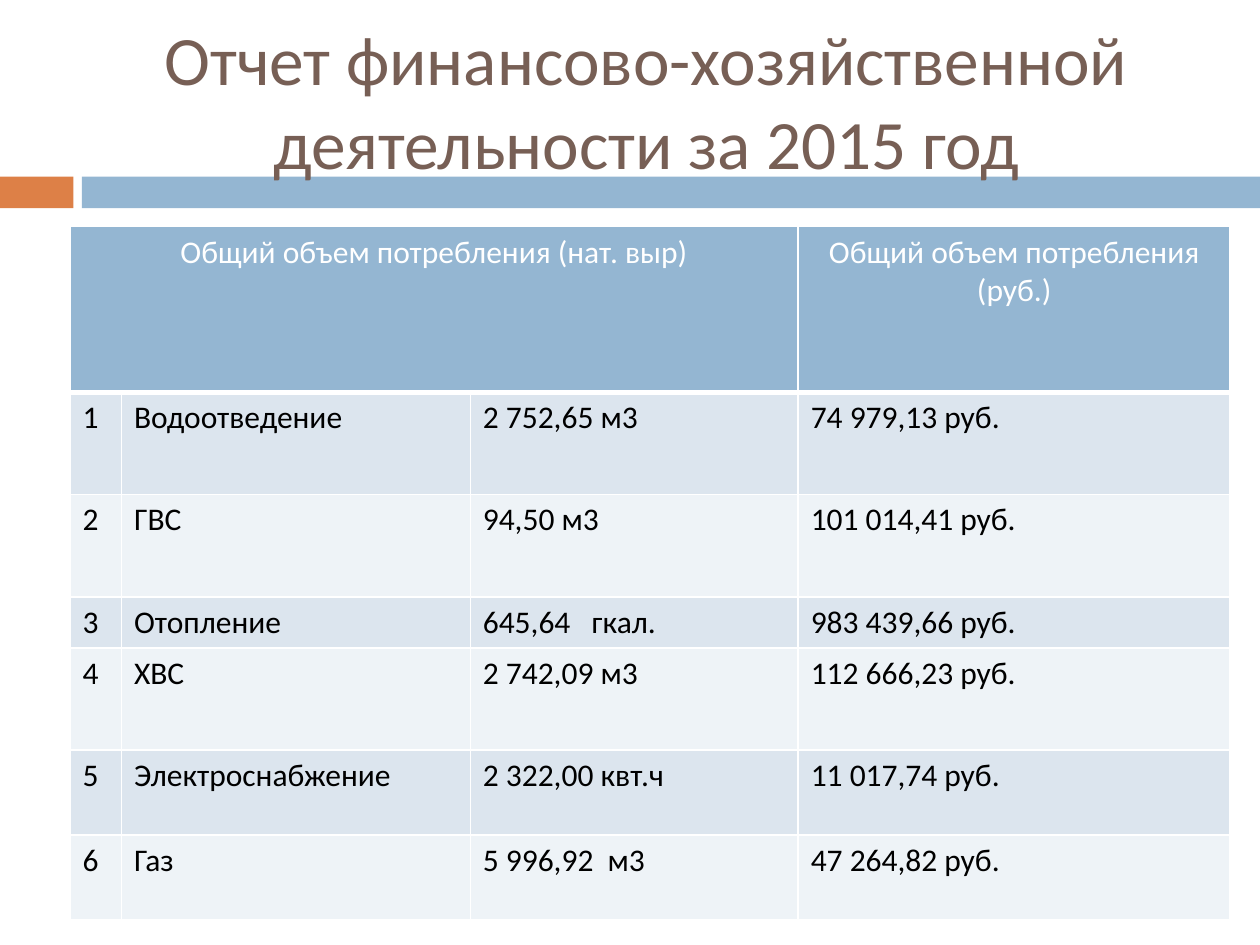
from dataclasses import dataclass

import pptx
import pptx.dml.color
import pptx.enum.shapes
import pptx.enum.text
import pptx.oxml
import pptx.oxml.ns
import pptx.util
from pptx.util import Cm, Pt

ALIGN = pptx.enum.text.PP_ALIGN
ANCHOR = pptx.enum.text.MSO_ANCHOR
FONT = "Calibri"
ORANGE, BLUE, BROWN = "DD8047", "94B6D2", "775F55"
WHITE, BLACK = "FFFFFF", "000000"
BANDS = ("DCE5EE", "EEF3F7")

COL_WIDTHS = (1.04, 7.03, 6.61, 8.71)
HEADER_HEIGHT = 3.34


@dataclass(frozen=True)
class Bar:
    left: float
    width: float
    color: str


@dataclass(frozen=True)
class Resource:
    name: str
    volume: str
    cost: str
    height: float


BARS = (Bar(0, 1.48, ORANGE), Bar(1.65, 23.75, BLUE))

RESOURCES = (
    Resource("Водоотведение", "2 752,65 м3", "74 979,13 руб.", 2.06),
    Resource("ГВС", "94,50 м3", "101 014,41 руб.", 2.06),
    Resource("Отопление", "645,64   гкал.", "983 439,66 руб.", 1.03),
    Resource("ХВС", "2 742,09 м3", "112 666,23 руб.", 2.06),
    Resource("Электроснабжение", "2 322,00 квт.ч", "11 017,74 руб.", 1.71),
    Resource("Газ", "5 996,92  м3", "47 264,82 руб.", 1.71),
)


def rgb(color: str) -> pptx.dml.color.RGBColor:
    return pptx.dml.color.RGBColor.from_string(color)


def write(tf, text: str, *, size: float = 18, color: str = BLACK, align=ALIGN.LEFT) -> None:
    p = tf.paragraphs[0]
    p.alignment = align
    r = p.add_run()
    r.text = text
    r.font.name = FONT
    r.font.size = Pt(size)
    r.font.bold = False
    r.font.color.rgb = rgb(color)


def draw_bar(s, bar: Bar) -> None:
    sp = s.shapes.add_shape(pptx.enum.shapes.MSO_SHAPE.RECTANGLE,
                            Cm(bar.left), Cm(3.56), Cm(bar.width), Cm(0.64))
    sp.shadow.inherit = False
    sp.fill.solid()
    sp.fill.fore_color.rgb = rgb(bar.color)
    sp.line.fill.background()


def place_title(s, text: str) -> None:
    """Fill the title placeholder and bring it in front of the bars."""
    title = s.shapes.title
    title.left, title.top, title.width, title.height = Cm(1.7), Cm(0.64), Cm(22.66), Cm(2.74)
    tf = title.text_frame
    tf.word_wrap = True
    tf.auto_size = pptx.enum.text.MSO_AUTO_SIZE.NONE
    tf.vertical_anchor = ANCHOR.MIDDLE
    write(tf, text, size=39.6, color=BROWN, align=ALIGN.CENTER)
    s.shapes.element.append(title.element)


def set_borders(cell, bottom: float) -> None:
    """Draw white borders, 1 pt wide except for the bottom one."""
    props = cell._tc.get_or_add_tcPr()
    sides = {"lnL": 1, "lnR": 1, "lnT": 1, "lnB": bottom}
    for i, (side, width) in enumerate(sides.items()):
        props.insert(i, pptx.oxml.parse_xml(
            f'<a:{side} {pptx.oxml.ns.nsdecls("a")} w="{Pt(width)}"><a:solidFill>'
            f'<a:srgbClr val="{WHITE}"/></a:solidFill></a:{side}>'))


def style_cell(cell, fill: str, bottom: float = 1) -> None:
    cell.fill.solid()
    cell.fill.fore_color.rgb = rgb(fill)
    cell.vertical_anchor = ANCHOR.TOP
    set_borders(cell, bottom)


def draw_table(s) -> None:
    heights = (HEADER_HEIGHT, *(item.height for item in RESOURCES))
    table = s.shapes.add_table(len(heights), len(COL_WIDTHS), Cm(1.41), Cm(4.57),
                               Cm(sum(COL_WIDTHS)), Cm(sum(heights))).table
    for column, width in zip(table.columns, COL_WIDTHS):
        column.width = Cm(width)
    for row, height in zip(table.rows, heights):
        row.height = Cm(height)

    for cell in table.rows[0].cells:
        style_cell(cell, BLUE, bottom=3)
    table.cell(0, 0).merge(table.cell(0, 2))
    for col, text in ((0, "Общий объем потребления (нат. выр)"),
                      (3, "Общий объем потребления (руб.)")):
        write(table.cell(0, col).text_frame, text, color=WHITE, align=ALIGN.CENTER)

    for number, item in enumerate(RESOURCES, 1):
        values = (str(number), item.name, item.volume, item.cost)
        for cell, text in zip(table.rows[number].cells, values):
            style_cell(cell, BANDS[(number - 1) % 2])
            write(cell.text_frame, text)


def main() -> None:
    prs = pptx.Presentation()
    prs.slide_width, prs.slide_height = Cm(25.4), Cm(19.05)
    s = prs.slides.add_slide(prs.slide_layouts[5])
    for bar in BARS:
        draw_bar(s, bar)
    place_title(s, "Отчет финансово-хозяйственной деятельности за 2015 год")
    draw_table(s)
    prs.save("out.pptx")


if __name__ == "__main__":
    main()
